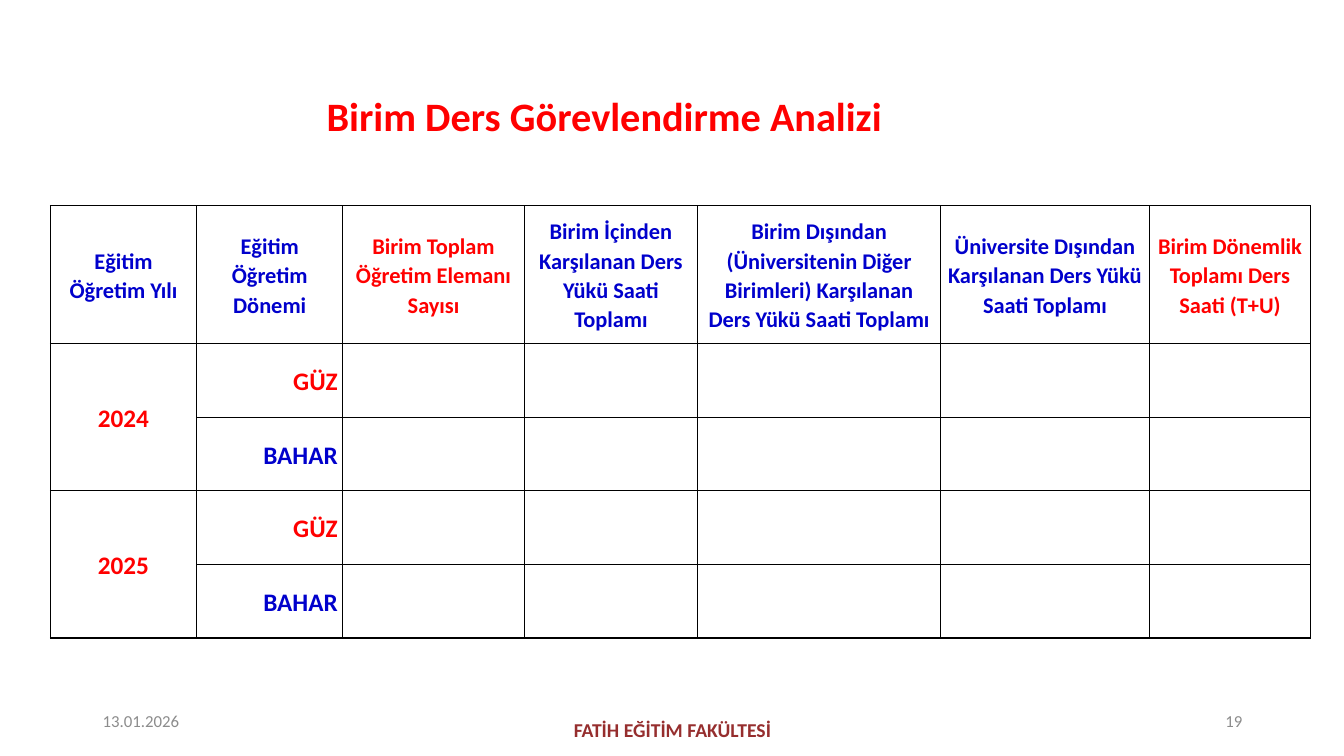
from dataclasses import dataclass

from lxml.etree import SubElement
from pptx import Presentation
from pptx.dml.color import RGBColor
from pptx.enum.text import MSO_ANCHOR, PP_ALIGN
from pptx.oxml.ns import qn
from pptx.util import Inches, Pt


@dataclass(frozen=True)
class Theme:
    font: str = "Calibri"
    red: str = "FF0000"
    blue: str = "0000CC"
    maroon: str = "962E2E"
    gray: str = "8C8C8C"
    border: str = "000000"
    title_size: float = 28.8
    body_size: int = 18
    header_size: int = 16
    unit_size: int = 14
    footer_size: int = 12
    border_width: int = 1


THEME = Theme()
COLUMN_WIDTHS = [1.45, 1.45, 1.8, 1.72, 2.41, 2.07, 1.6]
HEADER_HEIGHT = 1.37
TERM_HEIGHT = 0.73
HEADERS = [
    ("Eğitim Öğretim Yılı", THEME.blue),
    ("Eğitim Öğretim Dönemi", THEME.blue),
    ("Birim Toplam Öğretim Elemanı Sayısı", THEME.red),
    ("Birim İçinden Karşılanan Ders Yükü Saati Toplamı", THEME.blue),
    ("Birim Dışından (Üniversitenin Diğer Birimleri) Karşılanan Ders Yükü Saati Toplamı", THEME.blue),
    ("Üniversite Dışından Karşılanan Ders Yükü Saati Toplamı", THEME.blue),
    ("Birim Dönemlik Toplamı Ders Saati (T+U)", THEME.red),
]
YEARS = ["2024", "2025"]
TERMS = [("GÜZ", THEME.red), ("BAHAR", THEME.blue)]


def write_text(frame, text, size, color, bold=False, align=PP_ALIGN.CENTER):
    frame.text = text
    para = frame.paragraphs[0]
    para.alignment = align
    for span in para.runs:
        span.font.name = THEME.font
        span.font.size = Pt(size)
        span.font.bold = bold
        span.font.color.rgb = RGBColor.from_string(color)
    return para


def add_title(page, text):
    title = page.shapes.title
    title.left, title.top = Inches(0.24), Inches(0.92)
    title.width, title.height = Inches(11.6), Inches(0.5)
    title.text_frame.vertical_anchor = MSO_ANCHOR.MIDDLE
    para = write_text(title.text_frame, text, THEME.title_size, THEME.red, bold=True)
    para.line_spacing = 0.9


def add_label(page, left, top, width, text, size, color, bold=False, align=PP_ALIGN.CENTER):
    box = page.shapes.add_textbox(Inches(left), Inches(top), Inches(width), Inches(0.4))
    box.text_frame.word_wrap = True
    box.text_frame.vertical_anchor = MSO_ANCHOR.MIDDLE
    write_text(box.text_frame, text, size, color, bold, align)


def outline_cell(cell):
    properties = cell._tc.get_or_add_tcPr()
    for side in ("lnL", "lnR", "lnT", "lnB"):
        line = SubElement(properties, qn(f"a:{side}"), w=str(Pt(THEME.border_width)))
        fill = SubElement(line, qn("a:solidFill"))
        SubElement(fill, qn("a:srgbClr"), val=THEME.border)


def fill_cell(cell, text, size, color, align=PP_ALIGN.CENTER):
    para = write_text(cell.text_frame, text, size, color, True, align)
    para.line_spacing = 1.07
    para.space_after = Pt(8)


def add_load_table(page):
    row_count = 1 + len(YEARS) * len(TERMS)
    frame = page.shapes.add_table(
        row_count, len(HEADERS), Inches(0.5), Inches(2.04),
        Inches(sum(COLUMN_WIDTHS)), Inches(HEADER_HEIGHT + TERM_HEIGHT * (row_count - 1)),
    )
    table = frame.table
    table.first_row = False
    table.horz_banding = False
    for column, width in zip(table.columns, COLUMN_WIDTHS):
        column.width = Inches(width)
    for index, row in enumerate(table.rows):
        row.height = Inches(TERM_HEIGHT if index else HEADER_HEIGHT)
    for cell in table.iter_cells():
        cell.margin_left = cell.margin_right = Inches(0.05)
        cell.margin_top, cell.margin_bottom = Inches(0.01), Inches(0)
        cell.vertical_anchor = MSO_ANCHOR.MIDDLE
        outline_cell(cell)
        cell.fill.background()

    for column, (text, color) in enumerate(HEADERS):
        fill_cell(table.cell(0, column), text, THEME.header_size, color)
    for year_index, year in enumerate(YEARS):
        first = 1 + year_index * len(TERMS)
        year_cell = table.cell(first, 0)
        year_cell.merge(table.cell(first + len(TERMS) - 1, 0))
        fill_cell(year_cell, year, THEME.body_size, THEME.red)
        for offset, (term, color) in enumerate(TERMS):
            fill_cell(table.cell(first + offset, 1), term, THEME.body_size, color, PP_ALIGN.RIGHT)


def main():
    deck = Presentation()
    deck.slide_width, deck.slide_height = Inches(13.33), Inches(7.5)
    page = deck.slides.add_slide(deck.slide_layouts.get_by_name("Title Only"))
    add_label(page, 4.42, 7.04, 4.5, "FATİH EĞİTİM FAKÜLTESİ", THEME.unit_size, THEME.maroon, bold=True)
    add_title(page, "Birim Ders Görevlendirme Analizi ")
    add_label(page, 0.92, 6.95, 3, "13.01.2026", THEME.footer_size, THEME.gray, align=PP_ALIGN.LEFT)
    add_label(page, 9.42, 6.95, 3, "19", THEME.footer_size, THEME.gray, align=PP_ALIGN.RIGHT)
    add_load_table(page)
    deck.save("out.pptx")


if __name__ == "__main__":
    main()
